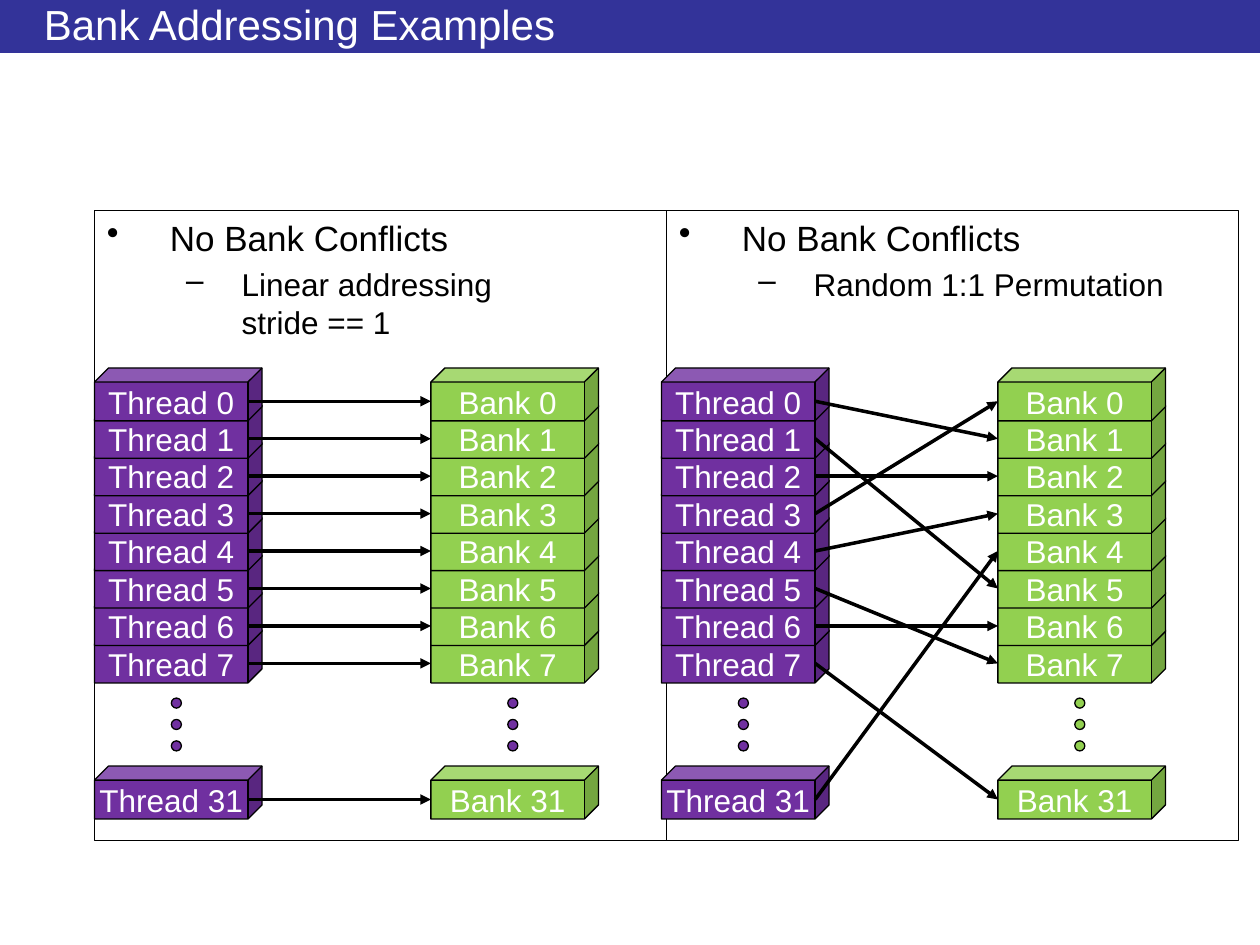
from lxml import etree
from pptx import Presentation
from pptx.dml.color import RGBColor
from pptx.enum.shapes import MSO_CONNECTOR, MSO_SHAPE
from pptx.enum.text import MSO_ANCHOR, PP_ALIGN
from pptx.oxml.ns import qn
from pptx.util import Inches, Pt

RECTANGLE, CUBE, OVAL = MSO_SHAPE.RECTANGLE, MSO_SHAPE.CUBE, MSO_SHAPE.OVAL
STRAIGHT = MSO_CONNECTOR.STRAIGHT
TOP, MIDDLE = MSO_ANCHOR.TOP, MSO_ANCHOR.MIDDLE
LEFT, CENTER = PP_ALIGN.LEFT, PP_ALIGN.CENTER

BLACK, WHITE, NAVY = "000000", "FFFFFF", "333399"
PURPLE, GREEN = "7030A0", "92D050"

# Cube stacks: rows 0 to 7 evenly spaced, then row 31 below the dots
CUBE_WIDTH, CUBE_HEIGHT, CUBE_DEPTH = 1.33, 0.42, 0.11
FIRST_ROW, LAST_ROW = 2.92, 5.0
ROW_TOPS = {row: FIRST_ROW + row * (LAST_ROW - FIRST_ROW) / 7 for row in range(8)}
ROW_TOPS[31] = 6.08
FRONT_MIDDLE = (CUBE_HEIGHT + CUBE_DEPTH) / 2
BANK_OFFSET = 2.67

# Bullet level: character, left margin, hanging indent, text size
BULLETS = [("•", 0.5, -0.5, 20), ("–", 1.07, -0.44, 18)]

# Thread number to bank number
LINEAR = {row: row for row in ROW_TOPS}
PERMUTED = {0: 1, 1: 5, 2: 2, 3: 0, 4: 3, 5: 7, 6: 6, 7: 31, 31: 4}


def color(hex_string):
    return RGBColor.from_string(hex_string)


def style_text(para, size, hex_string):
    for span in para.runs:
        formats = {"name": "Arial", "size": Pt(size)}
        for name, value in formats.items():
            setattr(span.font, name, value)
        span.font.color.rgb = color(hex_string)


def add_box(shapes, kind, left, top, width, height, fill=None, line=BLACK):
    box = shapes.add_shape(kind, Inches(left), Inches(top), Inches(width), Inches(height))
    box.shadow.inherit = False
    if fill:
        box.fill.solid()
        box.fill.fore_color.rgb = color(fill)
    else:
        box.fill.background()
    if line:
        box.line.color.rgb = color(line)
        box.line.width = Pt(0.75)
    else:
        box.line.fill.background()
    return box


def add_title(shapes, text):
    add_box(shapes, RECTANGLE, 0, 0, 10, 0.42, NAVY, None)
    title = shapes.add_textbox(Inches(0.25), Inches(0.05), Inches(9.25), Inches(0.28))
    frame = title.text_frame
    formats = {"word_wrap": True, "vertical_anchor": MIDDLE, "margin_top": 0, "margin_bottom": 0}
    for name, value in formats.items():
        setattr(frame, name, value)
    frame.text = text
    style_text(frame.paragraphs[0], 24, WHITE)


def add_panel(shapes, left, lines):
    frame = add_box(shapes, RECTANGLE, left, 1.67, 4.54, 5).text_frame
    frame.word_wrap = True
    frame.vertical_anchor = TOP
    for level, (text, bullet) in enumerate(zip(lines, BULLETS)):
        character, margin, indent, size = bullet
        para = frame.add_paragraph() if level else frame.paragraphs[0]
        formats = {"text": text, "level": level, "alignment": LEFT, "space_before": Pt(size * 0.2)}
        for name, value in formats.items():
            setattr(para, name, value)
        style_text(para, size, BLACK)
        properties = para._p.get_or_add_pPr()
        properties.set("marL", str(Inches(margin)))
        properties.set("indent", str(Inches(indent)))
        etree.SubElement(properties, qn("a:buChar"), char=character)


def add_stack(shapes, left, label, fill, dot_fill):
    # Lower cubes first, so that each one overlaps the cube below it
    for row, top in reversed(ROW_TOPS.items()):
        cube = add_box(shapes, CUBE, left, top, CUBE_WIDTH, CUBE_HEIGHT, fill)
        cube.adjustments[0] = 0.266
        frame = cube.text_frame
        frame.word_wrap = False
        frame.vertical_anchor = MIDDLE
        frame.text = f"{label} {row}"
        para = frame.paragraphs[0]
        para.alignment = CENTER
        style_text(para, 18, WHITE)
    for dot in range(3):
        add_box(shapes, OVAL, left + 0.61, 5.54 + dot * 0.17, 0.08, 0.08, dot_fill)


def add_arrow(shapes, start_x, start_y, end_x, end_y):
    arrow = shapes.add_connector(
        STRAIGHT, Inches(start_x), Inches(start_y), Inches(end_x), Inches(end_y))
    arrow.line.color.rgb = color(BLACK)
    arrow.line.width = Pt(2)
    etree.SubElement(arrow.line._get_or_add_ln(), qn("a:tailEnd"), type="triangle")
    etree.SubElement(arrow._element.spPr, qn("a:effectLst"))


def add_mapping(page, left, mapping, bank_dots):
    shapes = page.shapes.add_group_shape().shapes
    bank_left = left + BANK_OFFSET
    add_stack(shapes, bank_left, "Bank", GREEN, bank_dots)
    add_stack(shapes, left, "Thread", PURPLE, PURPLE)
    for thread, bank in mapping.items():
        add_arrow(shapes, left + CUBE_WIDTH - CUBE_DEPTH, ROW_TOPS[thread] + FRONT_MIDDLE,
                  bank_left, ROW_TOPS[bank] + FRONT_MIDDLE)


def main():
    deck = Presentation()
    deck.slide_width, deck.slide_height = Inches(10), Inches(7.5)
    page = deck.slides.add_slide(deck.slide_layouts[6])

    add_title(page.shapes, "Bank Addressing Examples")

    # Panels with their headings
    add_panel(page.shapes, 0.75, ["No Bank Conflicts", "Linear addressing \vstride == 1"])
    add_panel(page.shapes, 5.29, ["No Bank Conflicts", "Random 1:1 Permutation"])

    # Thread-to-bank diagrams
    add_mapping(page, 0.75, LINEAR, PURPLE)
    add_mapping(page, 5.25, PERMUTED, GREEN)

    deck.save("out.pptx")


if __name__ == "__main__":
    main()
